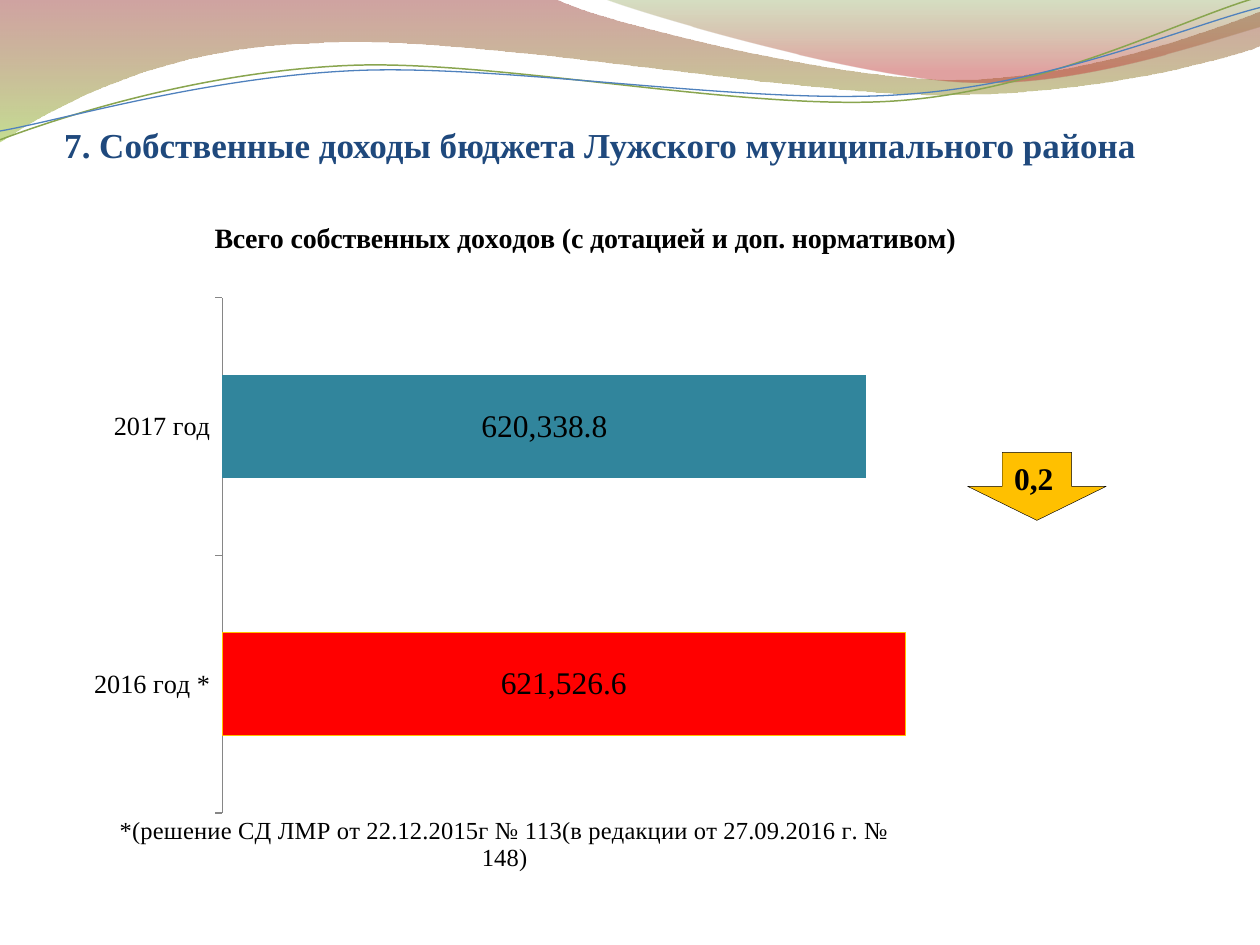
import dataclasses

import lxml.etree
import pptx
import pptx.chart.data
import pptx.dml.color
import pptx.enum.chart
import pptx.enum.shapes
import pptx.enum.text
import pptx.oxml
import pptx.oxml.ns
import pptx.util

PX = 9144  # EMU in one px, 100 px to the inch
qn = pptx.oxml.ns.qn


@dataclasses.dataclass(frozen=True)
class Theme:
    font: str = "Times New Roman"
    chart_font: str = "TeX Gyre Pagella"
    title: str = "1F497D"
    text: str = "000000"
    axis: str = "868686"
    bar_2016: str = "FF0000"
    bar_2017: str = "31859C"
    accent: str = "FFC000"
    green_line: str = "89A54F"
    blue_line: str = "4F81BD"
    title_size: int = 20
    value_size: int = 18
    heading_size: int = 16
    axis_size: int = 15
    note_size: int = 14


THEME = Theme()

# Each wave starts at a point; six numbers make a curve, two make a line
RED_WAVE = [(0, 0), (440, -1), (476, 17, 664, 63, 758, 63),
            (853, 63, 958, 26, 1000, 9), (1001, 36),
            (983, 44, 870, 76, 746, 75), (622, 75, 382, 28, 257, 34),
            (129, 36, 46, 83, -1, 113)]
GREEN_WAVE = [(479, -1), (509, 11, 682, 62, 769, 65),
              (856, 69, 961, 32, 1000, 21), (1000, 0)]
GREEN_CURVE = [(0, 111), (48, 93, 158, 57, 277, 52),
               (395, 47, 593, 89, 713, 80), (833, 71, 938, 15, 998, -2)]
BLUE_CURVE = [(0, 104), (47, 96, 164, 61, 283, 56),
              (403, 51, 597, 84, 717, 75), (836, 67, 941, 21, 1000, 6)]


def rgb(color):
    return pptx.dml.color.RGBColor.from_string(color)


def emu(*lengths):
    return [round(n * PX) for n in lengths]


def style(font, size, color=THEME.text, bold=False, name=THEME.font):
    font.name, font.size, font.bold = name, pptx.util.Pt(size), bold
    font.color.rgb = rgb(color)


def write(tf, text, size, color=THEME.text, align="CENTER",
          anchor="MIDDLE", wrap=True):
    tf.margin_left = tf.margin_right = tf.margin_top = tf.margin_bottom = 0
    tf.word_wrap = wrap
    tf.vertical_anchor = getattr(pptx.enum.text.MSO_ANCHOR, anchor)
    p = tf.paragraphs[0]
    p.alignment = getattr(pptx.enum.text.PP_ALIGN, align)
    r = p.add_run()
    r.text = text
    style(r.font, size, color, bold=True)


def add_path(s, box, segments, close):
    """Draw a freeform, then join each three points of a curve in a Bézier."""
    points = [emu(box[0] + seg[i], box[1] + seg[i + 1])
              for seg in segments for i in range(0, len(seg), 2)]
    builder = s.shapes.build_freeform(*points[0], scale=1.0)
    builder.add_line_segments(points[1:], close=close)
    sp = builder.convert_to_shape()
    sp.shadow.inherit = False
    lines = iter(list(sp._element.iter(qn("a:lnTo"))))
    for seg in segments[1:]:
        first = next(lines)
        if len(seg) == 6:
            curve = first.makeelement(qn("a:cubicBezTo"))
            first.addprevious(curve)
            for line in (first, next(lines), next(lines)):
                curve.append(line[0])
                line.getparent().remove(line)
    return sp


def add_waves(s, box):
    # Shaded bands: colour, position and opacity of each gradient stop
    bands = [(RED_WAVE, (("973330", 0, 45), ("95C238", 1, 55))),
             (GREEN_WAVE, (("769537", 0, 30), ("BE3330", 0.8, 45)))]
    for segments, stops in bands:
        sp = add_path(s, box, segments, True)
        sp.line.fill.background()
        sp.fill.gradient()
        sp.fill.gradient_angle = 270
        for stop, (color, position, _) in zip(sp.fill.gradient_stops, stops):
            stop.color.rgb = rgb(color)
            stop.position = position
        colors = sp._element.spPr.iter(qn("a:srgbClr"))
        for clr, (_, _, opacity) in zip(colors, stops):
            lxml.etree.SubElement(clr, qn("a:alpha"), val=str(opacity * 1000))
    # Thin curves
    for segments, color, width in ((GREEN_CURVE, THEME.green_line, 0.85),
                                   (BLUE_CURVE, THEME.blue_line, 0.75)):
        sp = add_path(s, box, segments, False)
        sp.fill.background()
        sp.line.color.rgb = rgb(color)
        sp.line.width = pptx.util.Pt(width)


def add_title(s, box, text):
    sp = s.shapes.title
    sp.left, sp.top, sp.width, sp.height = emu(*box)
    write(sp.text_frame, text, THEME.title_size, THEME.title,
          "LEFT", "BOTTOM")
    sp.text_frame.margin_top = pptx.util.Inches(0.05)
    sp._element.getparent().append(sp._element)  # in front of the waves


def set_layout(parent, index, **settings):
    """Place a chart part by fractions of the chart area."""
    for old in parent.findall(qn("c:layout")):
        parent.remove(old)
    layout = parent.makeelement(qn("c:layout"))
    parent.insert(index, layout)
    manual = lxml.etree.SubElement(layout, qn("c:manualLayout"))
    for key, value in settings.items():
        lxml.etree.SubElement(manual, qn(f"c:{key}"), val=str(value))


def add_chart_text(title, text, size, bold):
    r = title.text_frame.paragraphs[0].add_run()
    r.text = text
    style(r.font, size, bold=bold)


def add_income_chart(s, box):
    data = pptx.chart.data.CategoryChartData(number_format="#,##0.0")
    data.categories = ["2016 год *", "2017 год"]
    data.add_series("Series 1", (621526.6, 620338.8))
    kinds = pptx.enum.chart
    chart = s.shapes.add_chart(kinds.XL_CHART_TYPE.BAR_CLUSTERED,
                               *emu(*box), data).chart
    chart.has_legend = False
    style(chart.font, THEME.value_size, name=THEME.chart_font)

    # Heading
    chart.has_title = True
    add_chart_text(chart.chart_title,
                   "Всего собственных доходов (с дотацией и доп. нормативом)",
                   THEME.heading_size, True)

    # Axes, with the note as title of the value axis
    cat, val = chart.category_axis, chart.value_axis
    style(cat.tick_labels.font, THEME.axis_size)
    cat.major_tick_mark = kinds.XL_TICK_MARK.OUTSIDE
    cat.format.line.color.rgb = rgb(THEME.axis)
    val.minimum_scale, val.maximum_scale = 600500, 622000
    val.major_unit = 40000
    val.has_major_gridlines = False
    val.visible = False
    val.has_title = True
    add_chart_text(val.axis_title, "*(решение СД ЛМР от 22.12.2015г № 113"
                   "(в редакции от 27.09.2016 г. № 148)",
                   THEME.note_size, False)
    set_layout(val.axis_title._element, 1, xMode="edge", yMode="edge",
               x=0.04, y=0.9)

    # Bars and values
    plot = chart.plots[0]
    plot.vary_by_categories = False
    plot.gap_width, plot.overlap = 150, 22
    series = plot.series[0]
    series.format.fill.solid()
    series.format.fill.fore_color.rgb = rgb(THEME.blue_line)
    for i, color in enumerate((THEME.bar_2016, THEME.bar_2017)):
        fill = series.points[i].format.fill
        fill.solid()
        fill.fore_color.rgb = rgb(color)
    outline = series.points[0].format.line
    outline.color.rgb = rgb(THEME.accent)
    outline.width = pptx.util.Pt(0.25)
    labels = series.data_labels
    labels.show_value = True
    labels.position = kinds.XL_LABEL_POSITION.CENTER
    labels.number_format, labels.number_format_is_linked = "#,##0.0", False
    style(labels.font, THEME.value_size)
    plot_area = chart._chartSpace.find(f".//{qn('c:plotArea')}")
    set_layout(plot_area, 0, layoutTarget="inner", xMode="edge", yMode="edge",
               x=0.145, y=0.15, w=0.683, h=0.755)


def add_change_arrow(s, box, text):
    sp = s.shapes.add_shape(pptx.enum.shapes.MSO_SHAPE.DOWN_ARROW, *emu(*box))
    sp.shadow.inherit = False
    sp.fill.solid()
    sp.fill.fore_color.rgb = rgb(THEME.accent)
    sp.line.color.rgb = rgb(THEME.text)
    sp.line.width = pptx.util.Pt(0.25)
    write(sp.text_frame, text, THEME.value_size, wrap=False)
    sp.text_frame.margin_right = 5 * PX


def main():
    prs = pptx.Presentation()
    prs.slide_width, prs.slide_height = emu(1000, 750)
    s = prs.slides.add_slide(prs.slide_layouts[5])
    add_waves(s, (0, 0))
    add_title(s, (51, 84, 900, 47),
              "7. Собственные доходы бюджета Лужского муниципального района")
    add_income_chart(s, (59, 155, 811, 543))
    add_change_arrow(s, (768, 359, 110, 54), "0,2")
    prs.save("out.pptx")


if __name__ == "__main__":
    main()
